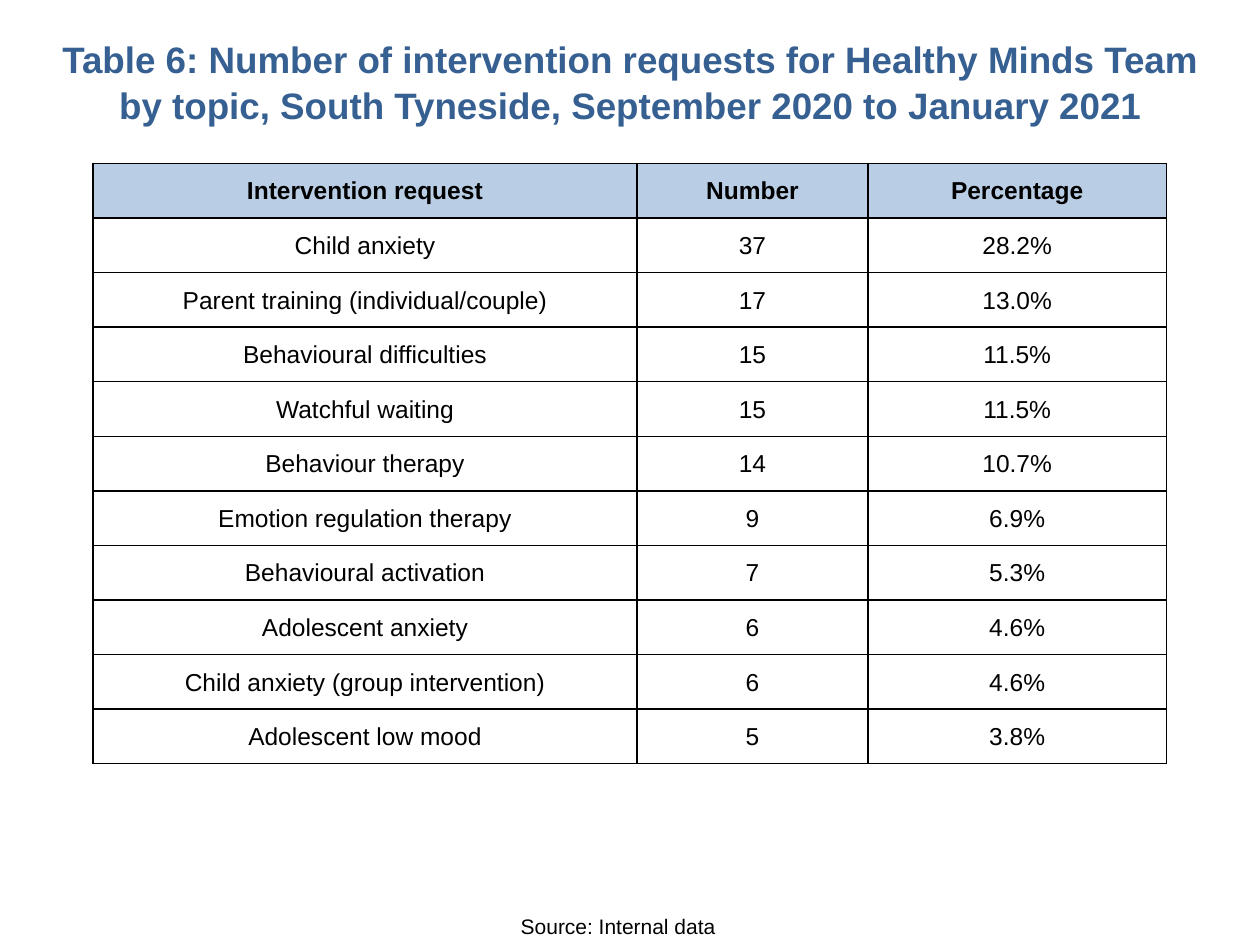
from lxml.etree import SubElement
from pptx import Presentation
from pptx.dml.color import RGBColor
from pptx.enum.text import MSO_ANCHOR as Anchor, PP_ALIGN as Align
from pptx.oxml.ns import qn
from pptx.util import Pt

# Content
TITLE = ("Table 6: Number of intervention requests for Healthy Minds Team "
         "by topic, South Tyneside, September 2020 to January 2021")
SOURCE = "Source: Internal data"
REQUESTS = [
    ("Intervention request", "Number", "Percentage"),
    ("Child anxiety", "37", "28.2%"),
    ("Parent training (individual/couple)", "17", "13.0%"),
    ("Behavioural difficulties", "15", "11.5%"),
    ("Watchful waiting", "15", "11.5%"),
    ("Behaviour therapy", "14", "10.7%"),
    ("Emotion regulation therapy", "9", "6.9%"),
    ("Behavioural activation", "7", "5.3%"),
    ("Adolescent anxiety", "6", "4.6%"),
    ("Child anxiety (group intervention)", "6", "4.6%"),
    ("Adolescent low mood", "5", "3.8%"),
]

# Layout and format, lengths in points
TITLE_BOX = (20, 16, 680.4, 60.5)
SOURCE_BOX = (232, 518.4, 242.6, 21.6)
TABLE_LEFT, TABLE_TOP, ROW_HEIGHT = 53.2, 93.4, 31.2
COLUMN_WIDTHS = (310.8, 132, 170.6)
CELL_FORMAT = {
    "margin_left": Pt(0.75), "margin_right": Pt(0.75),
    "margin_top": Pt(0.75), "margin_bottom": Pt(0),
    "vertical_anchor": Anchor.MIDDLE,
}


def color(value):
    return RGBColor.from_string(value)


def write(frame, text, size, ink="000000", bold=False):
    paragraph = frame.paragraphs[0]
    paragraph.alignment = Align.CENTER
    run = paragraph.add_run()
    run.text = text
    font_format = {"name": "Arial", "size": Pt(size), "bold": bold}
    for key, value in font_format.items():
        setattr(run.font, key, value)
    run.font.color.rgb = color(ink)
    return paragraph


def add_text(slide, box, text, size, **style):
    frame = slide.shapes.add_textbox(*map(Pt, box)).text_frame
    frame.word_wrap = True
    frame.vertical_anchor = Anchor.MIDDLE
    return write(frame, text, size, **style)


def add_borders(cell):
    properties = cell._tc.get_or_add_tcPr()
    for position, side in enumerate(("lnL", "lnR", "lnT", "lnB")):
        line = SubElement(properties, qn("a:" + side), w=str(Pt(1)))
        fill = SubElement(line, qn("a:solidFill"))
        SubElement(fill, qn("a:srgbClr"), val="000000")
        properties.insert(position, line)  # borders come before the fill


def add_request_table(slide):
    size = (sum(COLUMN_WIDTHS), ROW_HEIGHT * len(REQUESTS))
    table = slide.shapes.add_table(
        len(REQUESTS), len(COLUMN_WIDTHS),
        Pt(TABLE_LEFT), Pt(TABLE_TOP), *map(Pt, size)).table
    for column, width in zip(table.columns, COLUMN_WIDTHS):
        column.width = Pt(width)
    for r, request in enumerate(REQUESTS):
        table.rows[r].height = Pt(ROW_HEIGHT)
        is_header = r == 0
        for c, text in enumerate(request):
            cell = table.cell(r, c)
            for key, value in CELL_FORMAT.items():
                setattr(cell, key, value)
            cell.fill.solid()
            cell.fill.fore_color.rgb = color("B9CDE5" if is_header else "FFFFFF")
            add_borders(cell)
            write(cell.text_frame, text, 14, bold=is_header)


def main():
    deck = Presentation()
    deck.slide_width, deck.slide_height = Pt(720), Pt(540)
    slide = deck.slides.add_slide(deck.slide_layouts[6])
    title = add_text(slide, TITLE_BOX, TITLE, 21, ink="376092", bold=True)
    title.line_spacing = 1.04
    add_request_table(slide)
    add_text(slide, SOURCE_BOX, SOURCE, 12)
    deck.save("out.pptx")


if __name__ == "__main__":
    main()
